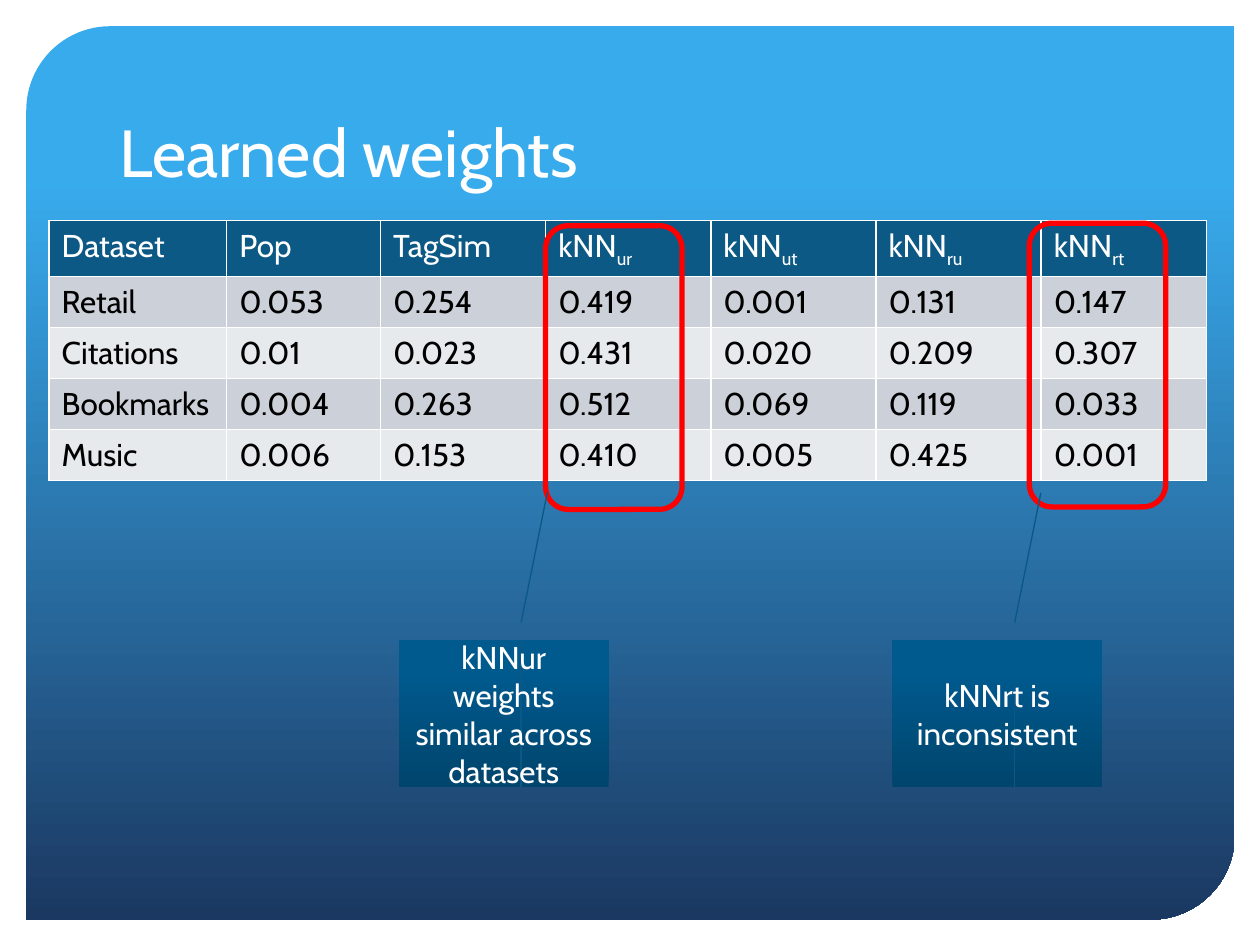
import pptx
import pptx.util
import pptx.dml.color
import pptx.enum.shapes
import pptx.enum.text

Cm, Pt = pptx.util.Cm, pptx.util.Pt
SHAPE = pptx.enum.shapes.MSO_SHAPE
ALIGN = pptx.enum.text.PP_ALIGN
ANCHOR = pptx.enum.text.MSO_ANCHOR

# Content
TITLE = "Learned weights"
HEADERS = [("Dataset", ""), ("Pop", ""), ("TagSim", ""), ("kNN", "ur"),
           ("kNN", "ut"), ("kNN", "ru"), ("kNN", "rt")]
WEIGHTS = [
    ("Retail", "0.053", "0.254", "0.419", "0.001", "0.131", "0.147"),
    ("Citations", "0.01", "0.023", "0.431", "0.020", "0.209", "0.307"),
    ("Bookmarks", "0.004", "0.263", "0.512", "0.069", "0.119", "0.033"),
    ("Music", "0.006", "0.153", "0.410", "0.005", "0.425", "0.001"),
]
# Remark, left of its callout, left and top of the outline round its column
REMARKS = [
    ("kNNur weights similar across datasets", 8.04, 11.0, 4.55),
    ("kNNrt is inconsistent", 17.99, 20.75, 4.5),
]
COLUMN_WIDTHS = [3.58, 3.1] + [3.33] * 5
ROW_HEIGHT = 1.03
FONT = "Cabin"
COLORS = {
    "white": "FFFFFF", "black": "000000", "sky": "38ABED", "navy": "1B3861",
    "header": "0C5986", "odd": "CCD1D9", "even": "E7EAED", "outline": "FF0000",
    "callout_bottom": "00456D", "callout_top": "005A8E", "callout_line": "095886",
}


def rgb(name):
    return pptx.dml.color.RGBColor.from_string(COLORS[name])


def style(paragraph, size, color, align=ALIGN.LEFT):
    paragraph.alignment = align
    font = paragraph.font
    font.name, font.size, font.bold = FONT, Pt(size), False
    font.color.rgb = rgb(color)


def add_shape(kind, left, top, width, height, adjustments=()):
    shape = slide.shapes.add_shape(kind, Cm(left), Cm(top), Cm(width), Cm(height))
    shape.shadow.inherit = False
    for index, value in enumerate(adjustments):
        shape.adjustments[index] = value
    return shape


def fill_gradient(shape, angle, *stops):
    shape.fill.gradient()
    shape.fill.gradient_angle = angle
    for stop, (position, color) in zip(shape.fill.gradient_stops, stops):
        stop.position = position
        stop.color.rgb = rgb(color)


def outline(shape, color, width):
    shape.line.color.rgb = rgb(color)
    shape.line.width = Pt(width)


deck = pptx.Presentation()
deck.slide_width, deck.slide_height = Cm(25.4), Cm(19.05)
slide = deck.slides.add_slide(deck.slide_layouts[5])

# Backdrop, sent behind the title
backdrop = add_shape(SHAPE.ROUND_2_DIAG_RECTANGLE, 0.53, 0.53, 24.36, 18.01, (0.094, 0))
fill_gradient(backdrop, 270, (0.17, "sky"), (1, "navy"))
backdrop.line.fill.background()
slide.shapes._spTree.insert(2, backdrop._element)

# Title
title = slide.shapes.title
title.left, title.top, title.width, title.height = Cm(2.16), Cm(1.07), Cm(21.06), Cm(2.9)
title.text_frame.text = TITLE
title.text_frame.vertical_anchor = ANCHOR.BOTTOM
style(title.text_frame.paragraphs[0], 38, "white")

# Table of weights
rows = [HEADERS] + [[(text, "") for text in row] for row in WEIGHTS]
table = slide.shapes.add_table(
    len(rows), len(HEADERS), Cm(0.99), Cm(4.45),
    Cm(sum(COLUMN_WIDTHS)), Cm(ROW_HEIGHT * len(rows))).table
for column, width in zip(table.columns, COLUMN_WIDTHS):
    column.width = Cm(width)
for r, row in enumerate(rows):
    table.rows[r].height = Cm(ROW_HEIGHT)
    fill_name = "header" if r == 0 else ("even", "odd")[r % 2]
    for c, (text, subscript) in enumerate(row):
        cell = table.cell(r, c)
        cell.fill.solid()
        cell.fill.fore_color.rgb = rgb(fill_name)
        paragraph = cell.text_frame.paragraphs[0]
        style(paragraph, 18, "white" if r == 0 else "black")
        paragraph.add_run().text = text
        if subscript:
            lowered = paragraph.add_run()
            lowered.text = subscript
            lowered._r.get_or_add_rPr().set("baseline", "-25000")

# Outlined columns and their callouts
for remark, callout_left, ring_left, ring_top in REMARKS:
    ring = add_shape(SHAPE.ROUNDED_RECTANGLE, ring_left, ring_top, 2.75, 5.72)
    ring.fill.background()
    outline(ring, "outline", 3)

    callout = add_shape(SHAPE.LINE_CALLOUT_1_ACCENT_BAR, callout_left, 12.91, 4.23, 2.96,
                        (-0.122, 0.583, -1.006, 0.708))
    fill_gradient(callout, 90, (0, "callout_bottom"), (0.8, "callout_top"))
    outline(callout, "callout_line", 0.75)
    frame = callout.text_frame
    frame.word_wrap = True
    frame.vertical_anchor = ANCHOR.MIDDLE
    frame.text = remark
    style(frame.paragraphs[0], 18, "white", ALIGN.CENTER)

deck.save("out.pptx")
